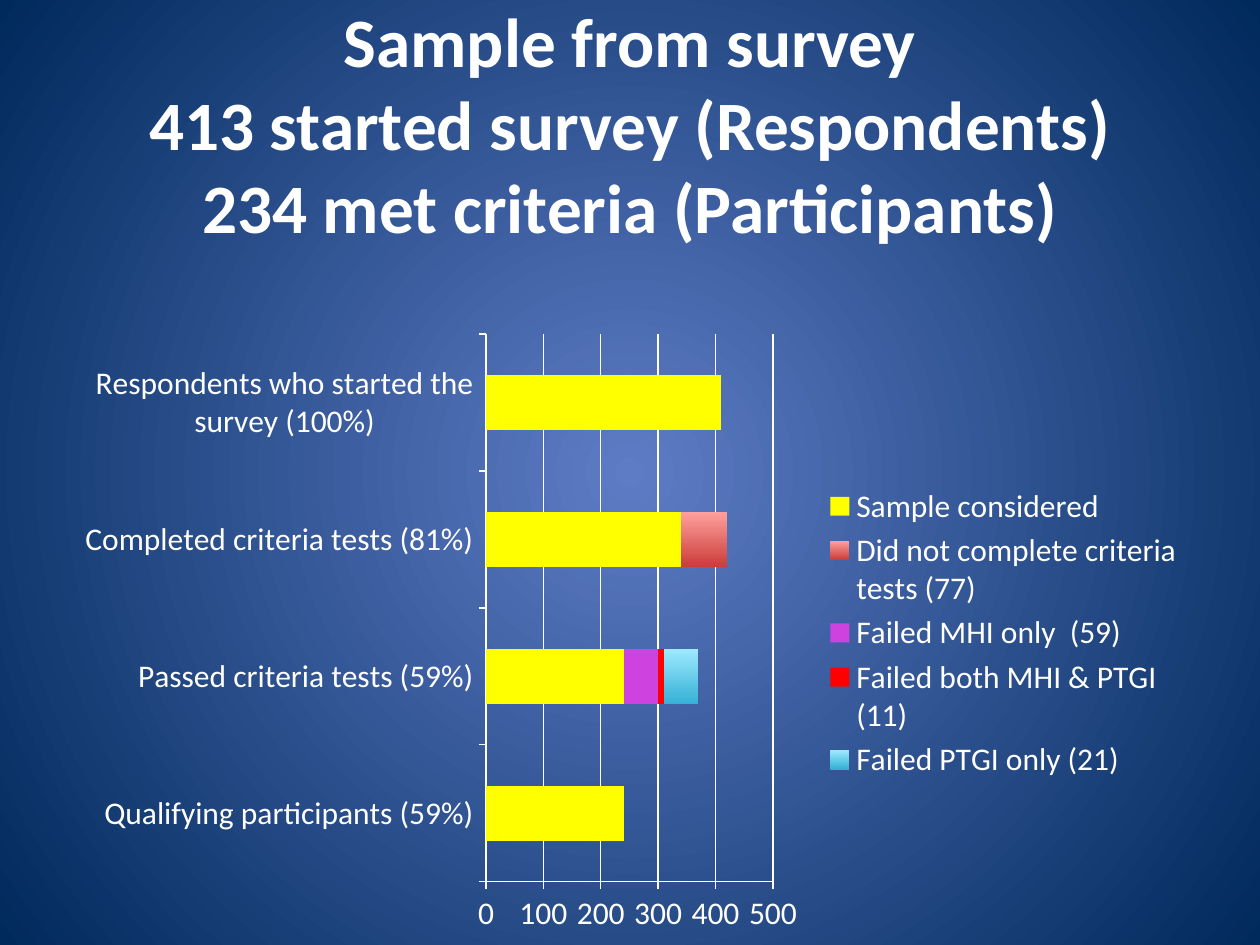
from dataclasses import dataclass

from lxml import etree
from pptx import Presentation
from pptx import util as u
from pptx.chart.data import CategoryChartData
from pptx.dml.color import RGBColor
from pptx.enum import chart as charts, text
from pptx.oxml.ns import qn

EMU_PER_PX = 914400 / 126


def px(length: int) -> u.Emu:
    return u.Emu(round(length * EMU_PER_PX))


@dataclass(frozen=True)
class Theme:
    font: str = "Calibri"
    ink: str = "FFFFFF"
    glow: str = "5E7CC5"
    edge: str = "00295C"
    title_size: float = 39.6
    chart_size: int = 18
    line_width: float = 0.75


@dataclass(frozen=True)
class Box:
    left: int
    top: int
    width: int
    height: int

    def emu(self) -> tuple:
        return px(self.left), px(self.top), px(self.width), px(self.height)


@dataclass(frozen=True)
class Outcome:
    name: str
    counts: tuple
    colours: tuple  # one colour is solid, two run from top to bottom


THEME = Theme()
PAGE = Box(0, 0, 1260, 945)
TITLE = Box(0, 0, 1260, 326)
TITLE_BOTTOM_MARGIN = 80
CHART = Box(63, 321, 1134, 624)
PLOT = Box(486, 334, 287, 548)
LEGEND = Box(821, 481, 365, 304)

TITLE_LINES = ("Sample from survey", "413 started survey (Respondents)",
               "234 met criteria (Participants)")
STAGES = ("Qualifying participants (59%)", "Passed criteria tests (59%)",
          "Completed criteria tests (81%)",
          "Respondents who started the survey (100%)")
OUTCOMES = (
    Outcome("Sample considered", (240, 240, 340, 410), ("FFFF00",)),
    Outcome("Did not complete criteria tests (77)", (None, None, 80, None),
            ("FFA09D", "CB3D3A")),
    Outcome("Failed MHI only  (59)", (None, 60, None, None), ("CE42DF",)),
    Outcome("Failed both MHI & PTGI (11)", (None, 10, None, None), ("FF0000",)),
    Outcome("Failed PTGI only (21)", (None, 60, None, None),
            ("9EEAFF", "35B1D5")),
)


def rgb(colour: str) -> RGBColor:
    return RGBColor.from_string(colour)


def paint(fill, colours: tuple) -> None:
    if len(colours) == 1:
        fill.solid()
        fill.fore_color.rgb = rgb(colours[0])
        return
    fill.gradient()
    fill.gradient_angle = 270
    for position, (stop, colour) in enumerate(zip(fill.gradient_stops, colours)):
        stop.position = position
        stop.color.rgb = rgb(colour)


def style_font(font, size: float, bold: bool = False) -> None:
    font.name, font.size, font.bold = THEME.font, u.Pt(size), bold
    font.color.rgb = rgb(THEME.ink)


def style_line(line) -> None:
    line.color.rgb = rgb(THEME.ink)
    line.width = u.Pt(THEME.line_width)


def add_background(page) -> None:
    paint(page.background.fill, (THEME.glow, THEME.edge))
    gradient = page.background.fill._xPr.find(qn("a:gradFill"))
    gradient.remove(gradient.find(qn("a:lin")))
    circle = etree.SubElement(gradient, qn("a:path"), path="circle")
    etree.SubElement(circle, qn("a:fillToRect"),
                     {side: "50000" for side in "ltrb"})


def add_title(page) -> None:
    frame = page.shapes.add_textbox(*TITLE.emu()).text_frame
    frame.word_wrap = True
    frame.vertical_anchor = text.MSO_ANCHOR.MIDDLE
    frame.margin_top, frame.margin_bottom = 0, px(TITLE_BOTTOM_MARGIN)
    para = frame.paragraphs[0]
    para.text = "\v".join(TITLE_LINES)
    para.alignment = text.PP_ALIGN.CENTER
    style_font(para.font, THEME.title_size, bold=True)


def place(part, area: Box, index: int, inner: bool = False) -> None:
    """Fix a chart part at an area of the page, as fractions of the chart."""
    for old in part.findall(qn("c:layout")):
        part.remove(old)
    layout = etree.Element(qn("c:layout"))
    manual = etree.SubElement(layout, qn("c:manualLayout"))
    settings = [("layoutTarget", "inner")] if inner else []
    settings += [
        ("xMode", "edge"), ("yMode", "edge"),
        ("x", (area.left - CHART.left) / CHART.width),
        ("y", (area.top - CHART.top) / CHART.height),
        ("w", area.width / CHART.width), ("h", area.height / CHART.height),
    ]
    for tag, value in settings:
        etree.SubElement(manual, qn(f"c:{tag}"), val=str(value))
    part.insert(index, layout)


def add_sample_chart(page) -> None:
    data = CategoryChartData()
    data.categories = STAGES
    for outcome in OUTCOMES:
        data.add_series(outcome.name, outcome.counts)
    chart = page.shapes.add_chart(
        charts.XL_CHART_TYPE.BAR_STACKED, *CHART.emu(), data).chart
    chart.has_title = False
    style_font(chart.font, THEME.chart_size)

    # Bars
    bars = chart.plots[0]
    bars.gap_width, bars.overlap, bars.vary_by_categories = 150, 100, False
    for series, outcome in zip(bars.series, OUTCOMES):
        paint(series.format.fill, outcome.colours)

    # Axes
    for axis in (chart.category_axis, chart.value_axis):
        axis.major_tick_mark = charts.XL_TICK_MARK.OUTSIDE
        axis.minor_tick_mark = charts.XL_TICK_MARK.NONE
        style_line(axis.format.line)
    counts = chart.value_axis
    counts.minimum_scale, counts.maximum_scale, counts.major_unit = 0, 500, 100
    counts.has_major_gridlines = True
    style_line(counts.major_gridlines.format.line)

    # Legend and layout
    chart.has_legend = True
    chart.legend.position = charts.XL_LEGEND_POSITION.RIGHT
    chart.legend.include_in_layout = False
    place(chart.legend._element, LEGEND, 1)
    place(chart._chartSpace.chart.plotArea, PLOT, 0, inner=True)


def main() -> None:
    deck = Presentation()
    deck.slide_width, deck.slide_height = px(PAGE.width), px(PAGE.height)
    page = deck.slides.add_slide(deck.slide_layouts[6])
    add_background(page)
    add_title(page)
    add_sample_chart(page)
    deck.save("out.pptx")


if __name__ == "__main__":
    main()
